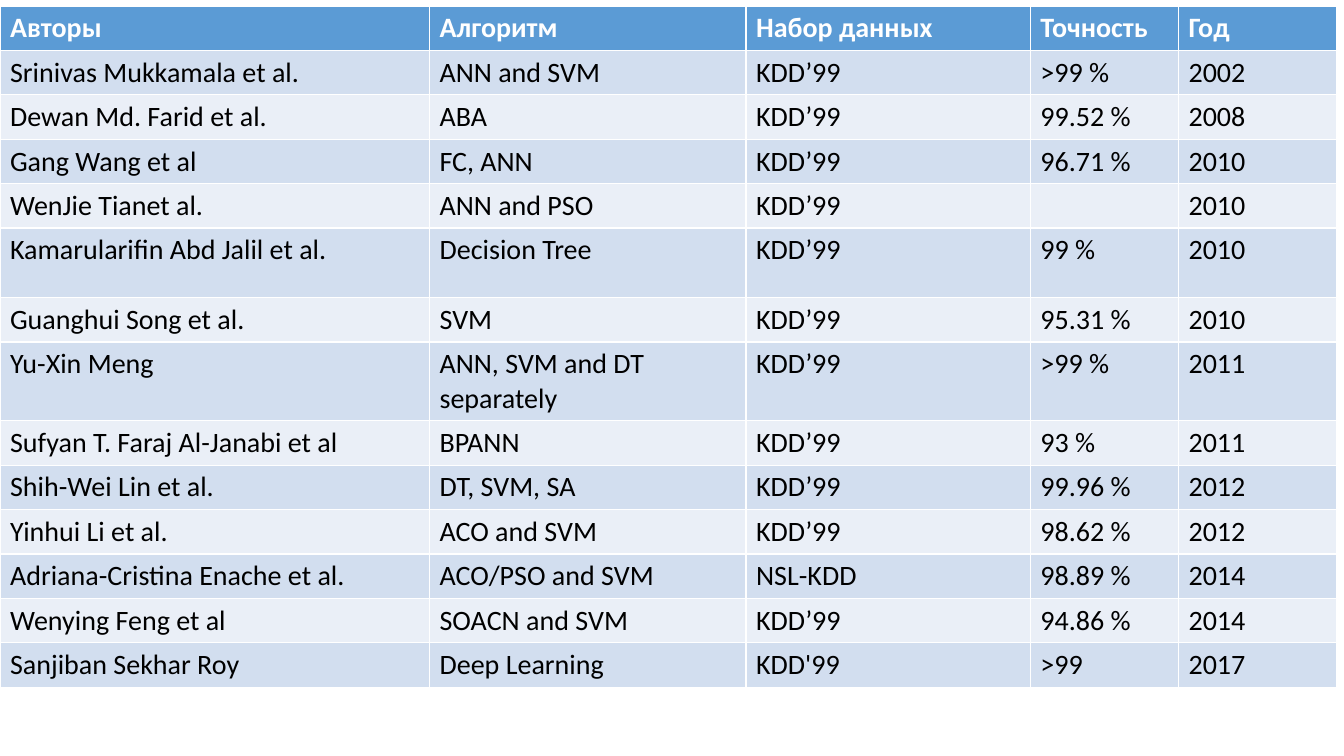
from pptx import Presentation
from pptx.dml.color import RGBColor
from pptx.util import Inches, Pt

HEAD = ("Авторы", "Алгоритм", "Набор данных", "Точность", "Год")
STUDIES = [
    ("Srinivas Mukkamala et al.", "ANN and SVM", "KDD’99", ">99 %", "2002"),
    ("Dewan Md. Farid et al.", "ABA", "KDD’99", "99.52 %", "2008"),
    ("Gang Wang et al", "FC, ANN", "KDD’99", "96.71 %", "2010"),
    ("WenJie Tianet al.", "ANN and PSO", "KDD’99", "", "2010"),
    ("Kamarularifin Abd Jalil et al.", "Decision Tree", "KDD’99", "99 %", "2010"),
    ("Guanghui Song et al.", "SVM", "KDD’99", "95.31 %", "2010"),
    ("Yu-Xin Meng", "ANN, SVM and DT separately", "KDD’99", ">99 %", "2011"),
    ("Sufyan T. Faraj Al-Janabi et al", "BPANN", "KDD’99", "93 %", "2011"),
    ("Shih-Wei Lin et al.", "DT, SVM, SA", "KDD’99", "99.96 %", "2012"),
    ("Yinhui Li et al.", "ACO and SVM", "KDD’99", "98.62 %", "2012"),
    ("Adriana-Cristina Enache et al.", "ACO/PSO and SVM", "NSL-KDD", "98.89 %", "2014"),
    ("Wenying Feng et al", "SOACN and SVM", "KDD’99", "94.86 %", "2014"),
    ("Sanjiban Sekhar Roy", "Deep Learning", "KDD'99", ">99", "2017"),
]
WIDTHS = (4.26, 3.14, 2.82, 1.47, 1.57)
ROW_H = 0.4
TALL = {5: 0.69}

BLUE = RGBColor(0x5B, 0x9B, 0xD5)
BANDS = (RGBColor(0xEA, 0xEF, 0xF7), RGBColor(0xD2, 0xDE, 0xEF))
WHITE = RGBColor(0xFF, 0xFF, 0xFF)
BLACK = RGBColor(0, 0, 0)


def fill_cell(cell, text, back, ink, bold):
    cell.fill.solid()
    cell.fill.fore_color.rgb = back
    para = cell.text_frame.paragraphs[0]
    para.font.size = Pt(20)
    if text:
        run = para.add_run()
        run.text = text
        font = run.font
        font.name = "Calibri"
        font.size = Pt(20)
        font.bold = bold
        font.color.rgb = ink


def main():
    deck = Presentation()
    deck.slide_width, deck.slide_height = Inches(13.33), Inches(7.5)
    slide = deck.slides.add_slide(deck.slide_layouts[6])

    rows = [HEAD] + STUDIES
    heights = [TALL.get(i, ROW_H) for i in range(len(rows))]
    table = slide.shapes.add_table(
        len(rows), len(HEAD), Inches(0), Inches(0.06),
        Inches(sum(WIDTHS)), Inches(sum(heights))).table

    for col, width in zip(table.columns, WIDTHS):
        col.width = Inches(width)
    for i, (row, height) in enumerate(zip(table.rows, heights)):
        row.height = Inches(height)
        top = i == 0
        back, ink = (BLUE, WHITE) if top else (BANDS[i % 2], BLACK)
        for cell, text in zip(row.cells, rows[i]):
            fill_cell(cell, text, back, ink, top)

    deck.save("out.pptx")


if __name__ == "__main__":
    main()
